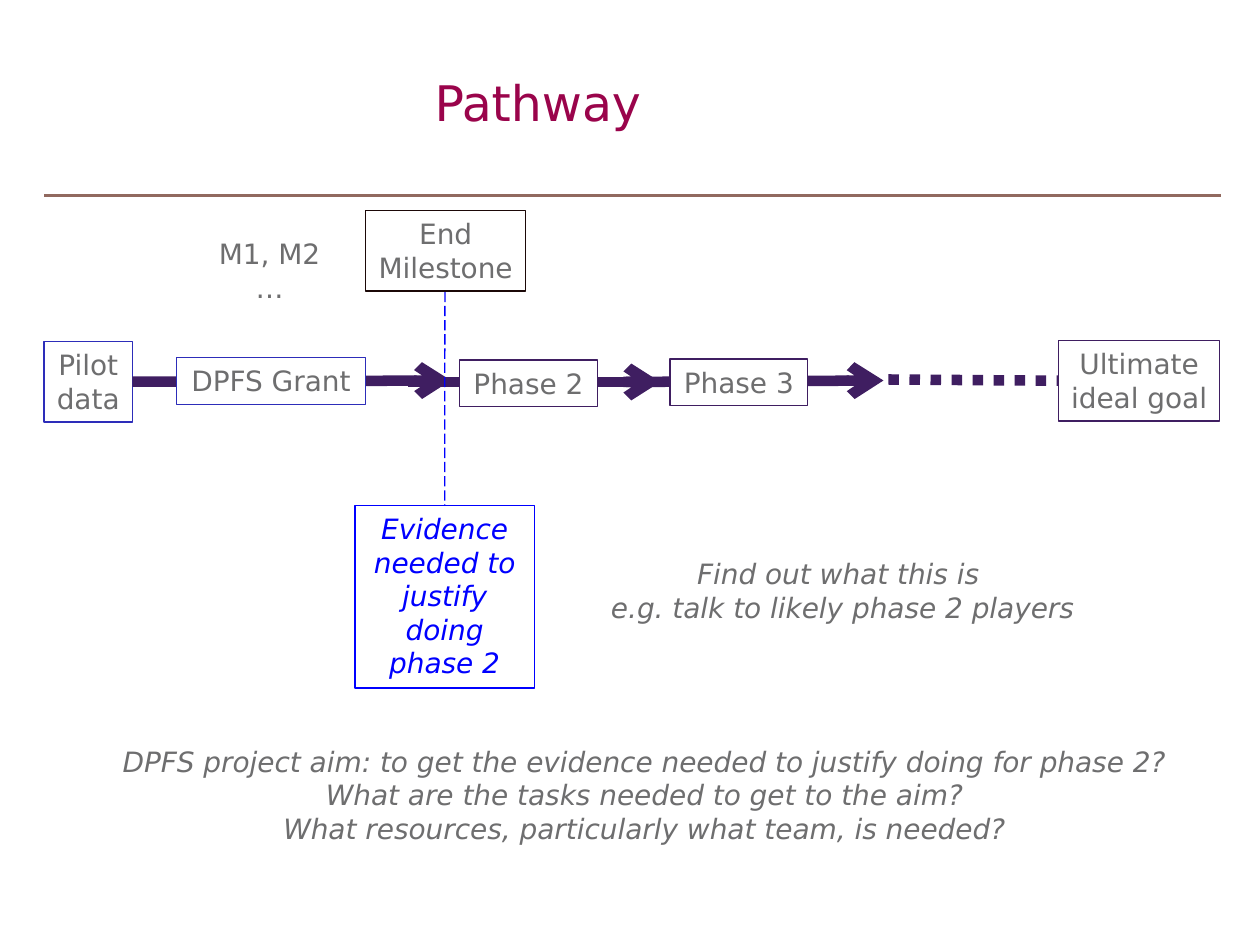
from lxml.etree import SubElement
from pptx import Presentation
from pptx.dml.color import RGBColor
from pptx.enum.dml import MSO_LINE_DASH_STYLE as DASH
from pptx.enum.shapes import MSO_CONNECTOR as CONN, MSO_SHAPE as SHAPE
from pptx.enum.text import MSO_ANCHOR as ANCHOR, MSO_AUTO_SIZE as FIT, PP_ALIGN as ALIGN
from pptx.oxml.ns import qn
from pptx.util import Cm, Pt

FONT = "DejaVu Sans"
GREY, PURPLE, BLUE, NAVY = "6E6E6F", "3F1E61", "0000FF", "2D2DB9"
rgb = RGBColor.from_string

prs = Presentation()
prs.slide_width, prs.slide_height = Cm(25.4), Cm(19.05)
s = prs.slides.add_slide(prs.slide_layouts[5])


def add_box(at, lines, line=None, fill=None, color=GREY, italic=False, wrap=False):
    at = [Cm(v) for v in at]
    if line:
        sp = s.shapes.add_shape(SHAPE.RECTANGLE, *at)
        sp.shadow.inherit = False
        sp.line.color.rgb = rgb(line)
        sp.line.width = Pt(0.75)
    else:
        sp = s.shapes.add_textbox(*at)
    if fill:
        sp.fill.solid()
        sp.fill.fore_color.rgb = rgb(fill)
    else:
        sp.fill.background()
    tf = sp.text_frame
    tf.word_wrap = wrap
    tf.auto_size = FIT.SHAPE_TO_FIT_TEXT
    tf.vertical_anchor = ANCHOR.TOP
    for i, text in enumerate(lines):
        p = tf.add_paragraph() if i else tf.paragraphs[0]
        p.alignment = ALIGN.CENTER
        r = p.add_run()
        r.text = text
        r.font.name, r.font.size, r.font.italic = FONT, Pt(16), italic
        r.font.color.rgb = rgb(color)
    return sp


def add_line(x1, y1, x2, y2, color, width, dash=None, arrow=False):
    c = s.shapes.add_connector(CONN.STRAIGHT, Cm(x1), Cm(y1), Cm(x2), Cm(y2))
    c.line.color.rgb = rgb(color)
    c.line.width = Pt(width)
    if dash:
        c.line.dash_style = dash
    if arrow:
        SubElement(c.line._get_or_add_ln(), qn("a:tailEnd"), type="arrow")
    SubElement(c._element.spPr, qn("a:effectLst"))
    return c


# Title and rule
add_line(0.89, 3.94, 24.61, 3.94, "91695F", 1.75)
title = s.shapes.title
title.left, title.top, title.width, title.height = Cm(0.36), Cm(1.17), Cm(20.96), Cm(1.78)
tf = title.text_frame
tf.vertical_anchor = ANCHOR.MIDDLE
p = tf.paragraphs[0]
p.alignment = ALIGN.CENTER
r = p.add_run()
r.text = "Pathway"
r.font.name, r.font.size = FONT, Pt(28)
r.font.color.rgb = rgb("9A044B")

# Pathway: arrows run behind the phase boxes
pilot = add_box((0.89, 6.88, 1.78, 1.63), ["Pilot", "data"], NAVY, "FFFFFF")
c = add_line(2.67, 7.7, 9.09, 7.67, PURPLE, 6, arrow=True)
c.begin_connect(pilot, 3)
add_box((3.56, 7.21, 3.81, 0.94), ["DPFS Grant"], NAVY, "FFFFFF")
goal = add_box((21.34, 6.86, 3.25, 1.63), ["Ultimate", "ideal goal"], PURPLE)
for name, left, top, x1, x2, y2 in [("Phase 2", 9.27, 7.26, 8.23, 13.31, 7.7),
                                    ("Phase 3", 13.51, 7.24, 12.62, 17.81, 7.67)]:
    add_line(x1, 7.7, x2, y2, PURPLE, 6, arrow=True)
    add_box((left, top, 2.77, 0.94), [name], PURPLE, "FFFFFF")
c = add_line(17.91, 7.65, 21.34, 7.67, PURPLE, 6, DASH.ROUND_DOT)
c.line.dash_style = DASH.ROUND_DOT
c.end_connect(goal, 1)

# Milestone and the evidence behind it
evidence = add_box((7.16, 10.19, 3.61, 3.68), ["Evidence needed to justify doing phase 2"],
                   BLUE, color=BLUE, italic=True, wrap=True)
c = add_line(8.97, 4.45, 8.97, 10.19, BLUE, 0.75, DASH.LONG_DASH)
c.end_connect(evidence, 0)
add_box((7.37, 4.24, 3.23, 1.63), ["End Milestone"], "1B0807", "FFFFFF", wrap=True)

# Notes around the pathway
add_box((4.04, 4.65, 2.79, 1.63), ["M1, M2 …"], wrap=True)
add_box((1.55, 14.88, 22.89, 2.31),
        ["DPFS project aim: to get the evidence needed to justify doing for phase 2?",
         "What are the tasks needed to get to the aim?",
         "What resources, particularly what team, is needed?"], italic=True, wrap=True)
add_box((11.25, 11.1, 11.3, 1.63),
        ["Find out what this is", " e.g. talk to likely phase 2 players"], italic=True, wrap=True)

prs.save("out.pptx")
